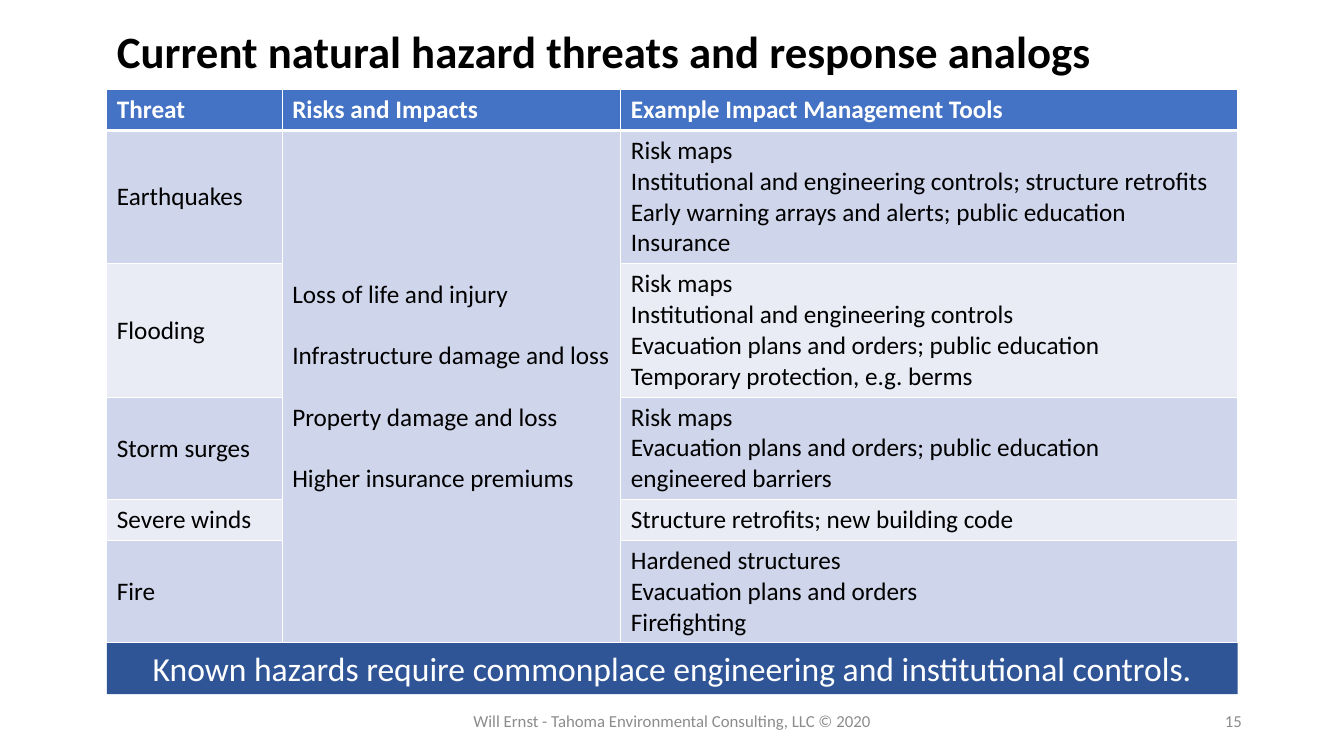
from lxml.etree import SubElement
from pptx import Presentation
from pptx.dml.color import RGBColor
from pptx.enum.shapes import MSO_SHAPE
from pptx.enum.text import MSO_ANCHOR, MSO_AUTO_SIZE, PP_ALIGN
from pptx.oxml.ns import qn
from pptx.util import Pt

BLACK = RGBColor(0x00, 0x00, 0x00)
WHITE = RGBColor(0xFF, 0xFF, 0xFF)
GREY = RGBColor(0x8C, 0x8C, 0x8C)
BLUE = RGBColor(0x44, 0x72, 0xC4)
NAVY = RGBColor(0x2F, 0x55, 0x97)
BANDS = RGBColor(0xCF, 0xD5, 0xEA), RGBColor(0xE9, 0xEB, 0xF5)

LEFT, WIDTH = 76.3, 807.8
COLS = 125.3, 241.9, 440.6
LINE, PAD = 22, 7.2

HEADS = "Threat", "Risks and Impacts", "Example Impact Management Tools"
RISKS = [
    "Loss of life and injury",
    "Infrastructure damage and loss",
    "Property damage and loss",
    "Higher insurance premiums",
]
THREATS = [
    ("Earthquakes", [
        "Risk maps",
        "Institutional and engineering controls; structure retrofits",
        "Early warning arrays and alerts; public education",
        "Insurance",
    ]),
    ("Flooding", [
        "Risk maps",
        "Institutional and engineering controls",
        "Evacuation plans and orders; public education",
        "Temporary protection, e.g. berms",
    ]),
    ("Storm surges", [
        "Risk maps",
        "Evacuation plans and orders; public education",
        "engineered barriers",
    ]),
    ("Severe winds", ["Structure retrofits; new building code"]),
    ("Fire", [
        "Hardened structures",
        "Evacuation plans and orders",
        "Firefighting",
    ]),
]


def write(frame, lines, size=18, color=BLACK, bold=False,
          align=PP_ALIGN.LEFT, gap=0, lead=None):
    for i, line in enumerate(lines):
        para = frame.paragraphs[0] if i == 0 else frame.add_paragraph()
        para.alignment = align
        para.space_before = Pt(gap if i else 0)
        if lead:
            para.line_spacing = lead
        run = para.add_run()
        run.text = line
        font = run.font
        font.name, font.size, font.bold = "Calibri", Pt(size), bold
        font.color.rgb = color


class Deck:
    def __init__(self):
        self.show = Presentation()
        self.show.slide_width, self.show.slide_height = Pt(960), Pt(540)
        self.slide = self.show.slides.add_slide(self.show.slide_layouts[5])

    def title(self, text, x, y, w, h):
        box = self.slide.shapes.title
        box.left, box.top, box.width, box.height = map(Pt, (x, y, w, h))
        frame = box.text_frame
        frame.auto_size = MSO_AUTO_SIZE.NONE
        frame.word_wrap = True
        frame.vertical_anchor = MSO_ANCHOR.MIDDLE
        write(frame, [text], size=32, bold=True, lead=0.9)

    def label(self, text, x, y, w, h, align):
        box = self.slide.shapes.add_textbox(*map(Pt, (x, y, w, h)))
        frame = box.text_frame
        frame.word_wrap = True
        frame.vertical_anchor = MSO_ANCHOR.MIDDLE
        write(frame, [text], size=12, color=GREY, align=align)

    def banner(self, text, x, y, w, h):
        box = self.slide.shapes.add_shape(
            MSO_SHAPE.RECTANGLE, *map(Pt, (x, y, w, h)))
        box.shadow.inherit = False
        box.fill.solid()
        box.fill.fore_color.rgb = NAVY
        box.line.fill.background()
        frame = box.text_frame
        frame.word_wrap = True
        frame.vertical_anchor = MSO_ANCHOR.TOP
        write(frame, [text], size=24, color=WHITE, align=PP_ALIGN.CENTER)

    def grid(self, x, y, cols, rows):
        part = self.slide.shapes.add_table(
            len(rows), len(cols), Pt(x), Pt(y), Pt(sum(cols)), Pt(sum(rows)))
        table = part.table
        for col, size in zip(table.columns, cols):
            col.width = Pt(size)
        for row, size in zip(table.rows, rows):
            row.height = Pt(size)
        return table

    def cell(self, cell, fill, top=1, base=1, anchor=MSO_ANCHOR.TOP):
        cell.vertical_anchor = anchor
        props = cell._tc.get_or_add_tcPr()
        for side, size in zip("LRTB", (1, 1, top, base)):
            edge = SubElement(props, qn(f"a:ln{side}"), w=str(Pt(size)))
            solid = SubElement(edge, qn("a:solidFill"))
            SubElement(solid, qn("a:srgbClr"), val=str(WHITE))
        cell.fill.solid()
        cell.fill.fore_color.rgb = fill


def main():
    deck = Deck()
    deck.title("Current natural hazard threats and response analogs",
               LEFT, 15.1, WIDTH, 46.8)

    counts = [1] + [len(tools) for _, tools in THREATS]
    table = deck.grid(LEFT, 64.1, COLS, [PAD + LINE * n for n in counts])
    for c, head in enumerate(HEADS):
        deck.cell(table.cell(0, c), BLUE, base=3)
        write(table.cell(0, c).text_frame, [head], color=WHITE, bold=True)
    for r, (threat, tools) in enumerate(THREATS, 1):
        for c in range(len(COLS)):
            deck.cell(table.cell(r, c), BANDS[0 if c == 1 else (r - 1) % 2],
                      top=3 if r == 1 else 1,
                      anchor=MSO_ANCHOR.TOP if c == 2 else MSO_ANCHOR.MIDDLE)
        write(table.cell(r, 0).text_frame, [threat])
        write(table.cell(r, 2).text_frame, tools)
    table.cell(1, 1).merge(table.cell(len(THREATS), 1))
    write(table.cell(1, 1).text_frame, RISKS, gap=LINE)

    deck.label("Will Ernst - Tahoma Environmental Consulting, LLC © 2020",
               318.2, 500.4, 324, 28.8, PP_ALIGN.CENTER)
    deck.banner("Known hazards require commonplace engineering and "
                "institutional controls.", LEFT, 459.4, WIDTH, 36.4)
    deck.label("15", 678.2, 500.4, 216, 28.8, PP_ALIGN.RIGHT)
    deck.show.save("out.pptx")


if __name__ == "__main__":
    main()
